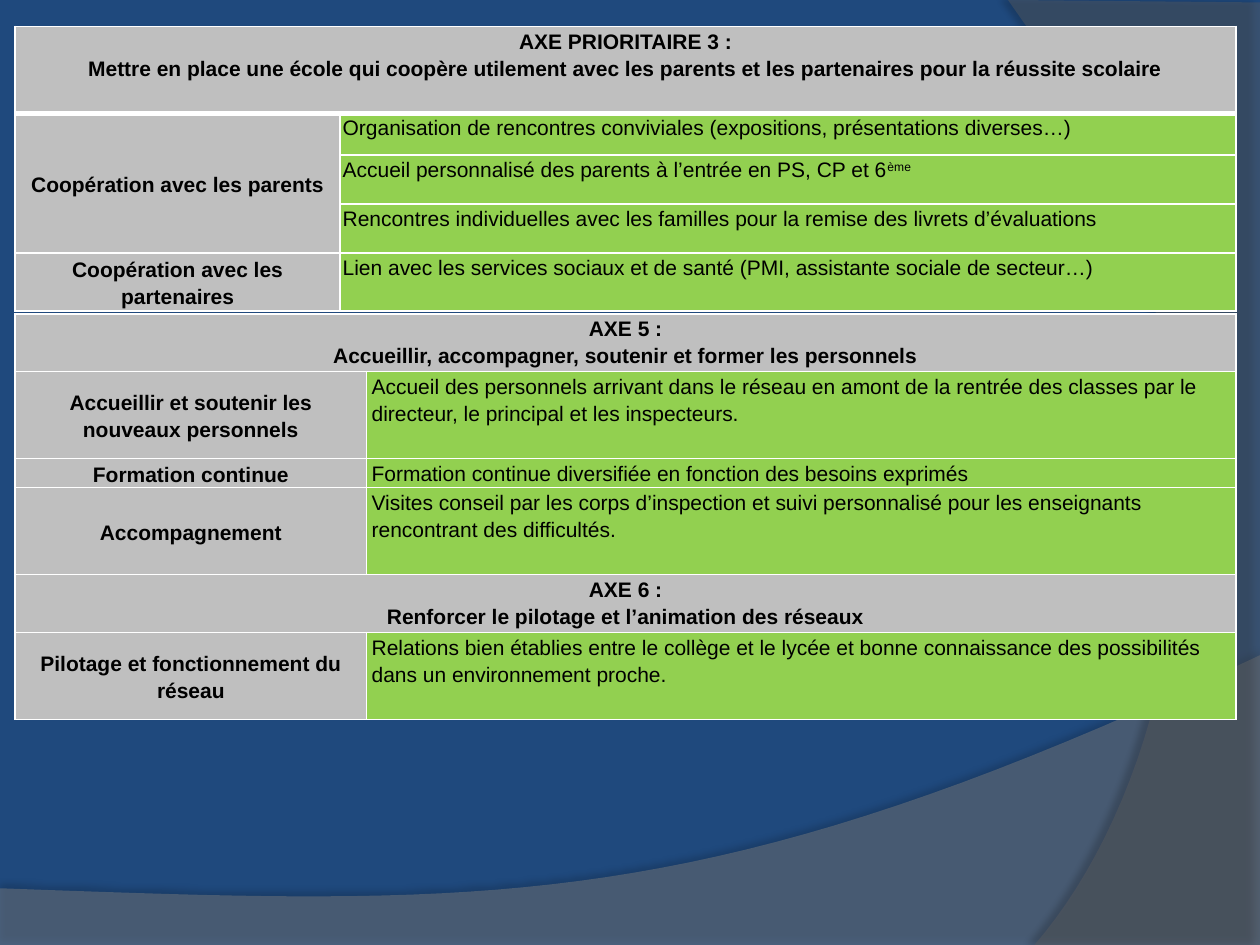
from lxml.etree import SubElement
from pptx import Presentation
from pptx.dml.color import RGBColor
from pptx.enum.text import MSO_ANCHOR, PP_ALIGN
from pptx.oxml.ns import qn
from pptx.util import Inches, Pt

GREY, GREEN, WHITE = "BFBFBF", "92D050", "FFFFFF"

# Each row: label, text, height. A row without text is a heading;
# a row without label continues the label above. "^" starts a superscript.
PARENTS_ROWS = [
    ("AXE PRIORITAIRE 3\u00a0:\nMettre en place une école qui coopère utilement avec les parents "
     "et les partenaires pour la réussite scolaire", None, 0.69),
    ("Coopération avec les parents",
     "Organisation de rencontres conviviales (expositions, présentations diverses…)", 0.33),
    (None, "Accueil personnalisé des parents à l’entrée en PS, CP et 6^ème", 0.39),
    (None, "Rencontres individuelles avec les familles pour la remise des livrets d’évaluations", 0.39),
    ("Coopération avec les partenaires",
     "Lien avec les services sociaux et de santé (PMI, assistante sociale de secteur…)", 0.46),
]
STAFF_ROWS = [
    ("AXE 5 :\nAccueillir, accompagner, soutenir et former les personnels", None, 0.46),
    ("Accueillir et soutenir les nouveaux personnels",
     "Accueil des personnels arrivant dans le réseau en amont de la rentrée des classes "
     "par le directeur, le principal et les inspecteurs.", 0.69),
    ("Formation continue", "Formation continue diversifiée en fonction des besoins exprimés", 0.23),
    ("Accompagnement",
     "Visites conseil par les corps d’inspection et suivi personnalisé pour les enseignants "
     "rencontrant des difficultés.", 0.69),
    ("AXE 6\u00a0:\nRenforcer le pilotage et l’animation des réseaux", None, 0.46),
    ("Pilotage et fonctionnement du réseau",
     "Relations bien établies entre le collège et le lycée et bonne connaissance des possibilités "
     "dans un environnement proche.", 0.69),
]


def color(value):
    return RGBColor.from_string(value)


def write(frame, text, size=12, font="Arial", ink="000000", bold=False, align=PP_ALIGN.LEFT):
    for index, line in enumerate(text.split("\n")):
        para = frame.add_paragraph() if index else frame.paragraphs[0]
        para.alignment, para.line_spacing = align, 1.15
        for level, part in enumerate(line.split("^")):
            span = para.add_run()
            span.text = part
            span.font.size, span.font.name, span.font.bold = Pt(size), font, bold
            span.font.color.rgb = color(ink)
            if level:
                span.font._element.set("baseline", "30000")


def draw_borders(cell, top=1, bottom=1):
    properties = cell._tc.get_or_add_tcPr()
    for side, width in (("L", 1), ("R", 1), ("T", top), ("B", bottom)):
        line = SubElement(properties, qn(f"a:ln{side}"), w=str(Pt(width)))
        SubElement(SubElement(line, qn("a:solidFill")), qn("a:srgbClr"), val=WHITE)


def place_table(page, box, rows, label_width, inset, heading_rule=1):
    left, top, width, height = box
    table = page.shapes.add_table(len(rows), 2, Inches(left), Inches(top),
                                  Inches(width), Inches(height)).table
    table.columns[0].width = Inches(label_width)
    table.columns[1].width = Inches(width - label_width)
    label_cell = None
    for index, (label, text, row_height) in enumerate(rows):
        table.rows[index].height = Inches(row_height)
        first, second = table.cell(index, 0), table.cell(index, 1)
        for cell, fill in ((first, GREY), (second, GREEN if text else GREY)):
            draw_borders(cell, top=heading_rule if index == 1 else 1,
                         bottom=heading_rule if index == 0 else 1)
            cell.fill.solid()
            cell.fill.fore_color.rgb = color(fill)
            cell.margin_left = cell.margin_right = Inches(inset)
            cell.margin_top = cell.margin_bottom = 0
        if label:
            label_cell = first
            write(first.text_frame, label, bold=True, align=PP_ALIGN.CENTER)
        if text:
            first.vertical_anchor = MSO_ANCHOR.MIDDLE
            write(second.text_frame, text)
        else:
            first.merge(second)
        # Extend the label over the last of its continuation rows
        if not label and (index + 1 == len(rows) or rows[index + 1][0]):
            label_cell.merge(first)


def curve(start, control1, control2, end, steps=40):
    for step in range(1, steps + 1):
        t = step / steps
        yield tuple((1 - t) ** 3 * a + 3 * (1 - t) ** 2 * t * b + 3 * (1 - t) * t ** 2 * c + t ** 3 * d
                    for a, b, c, d in zip(start, control1, control2, end))


def place_sweep(page, origin, corners, bend, fill, opacity, shadow):
    """Translucent band: straight corners, then a curve from the last corner."""
    points = [(Inches(origin[0] + x), Inches(origin[1] + y))
              for x, y in [*corners, *curve(corners[-1], *bend)]]
    builder = page.shapes.build_freeform(*points[0])
    builder.add_line_segments(points[1:], close=True)
    band = builder.convert_to_shape()
    band.fill.solid()
    band.fill.fore_color.rgb = color(fill)
    tint = band._element.spPr.find(qn("a:solidFill"))[0]
    SubElement(tint, qn("a:alpha"), val=str(opacity * 1000))
    band.line.fill.background()
    # Soft shadow
    band.shadow.inherit = False
    strength, blur, distance, angle = shadow
    effect = SubElement(band._element.spPr.find(qn("a:effectLst")), qn("a:outerShdw"),
                        blurRad=str(Pt(blur)), dist=str(Pt(distance)),
                        dir=str(angle * 60000), algn="ctr", rotWithShape="0")
    shade = SubElement(effect, qn("a:srgbClr"), val="000000")
    SubElement(shade, qn("a:alpha"), val=str(strength * 1000))


def place_background(page):
    page.background.fill.solid()
    page.background.fill.fore_color.rgb = color("1F497D")
    place_sweep(page, (0, 5.2), [(0, 1.85), (0, 2.31), (10, 2.31), (10, 0)],
                [(5.59, 2.09), (3.91, 1.99), (0, 1.85)], "7F7F7F", 45, (35, 4, 3.5, 270))
    place_sweep(page, (8, 0), [(2, 0.02), (2, 7.5), (0.21, 7.5)],
                [(1.35, 6.19), (2.18, 3), (0, 0)], "5E5E5E", 40, (45, 4, 4, 180))


def main():
    deck = Presentation()
    deck.slide_width, deck.slide_height = Inches(10), Inches(7.5)
    page = deck.slides.add_slide(deck.slide_layouts[6])
    place_background(page)
    place_table(page, (0.12, 0.21, 9.69, 2.26), PARENTS_ROWS, 2.58, 0.02, heading_rule=3)
    place_table(page, (0.12, 2.49, 9.69, 3.22), STAFF_ROWS, 2.79, 0.04)
    deck.save("out.pptx")


if __name__ == "__main__":
    main()
